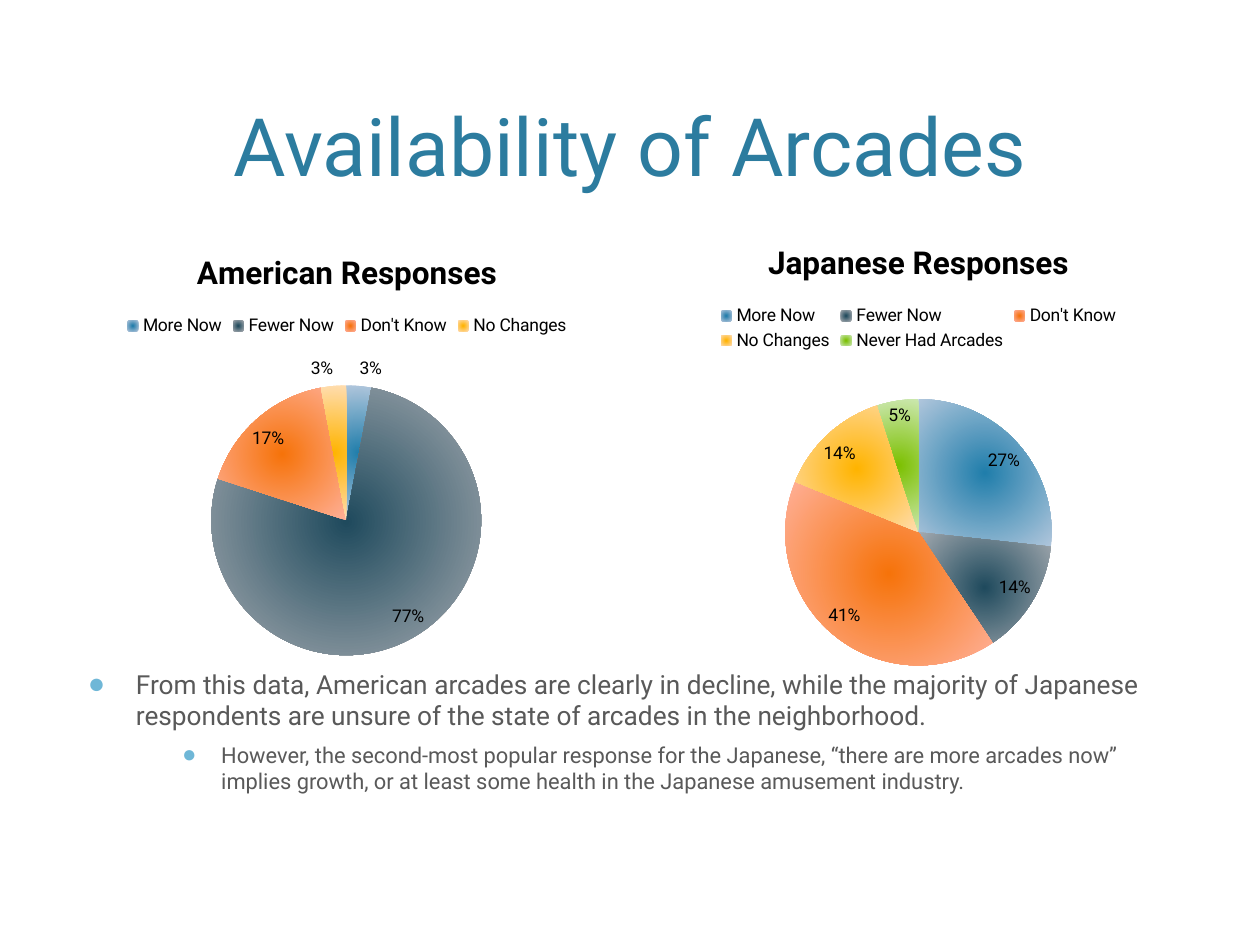
from lxml.etree import SubElement
from pptx import Presentation
from pptx.chart.data import CategoryChartData
from pptx.dml.color import RGBColor
from pptx.enum.chart import XL_CHART_TYPE as ChartType, XL_LABEL_POSITION as LabelPos, XL_LEGEND_POSITION as LegendPos
from pptx.enum.text import MSO_ANCHOR as Anchor, PP_ALIGN as Align
from pptx.oxml import parse_xml
from pptx.oxml.ns import nsdecls, qn
from pptx.util import Cm, Pt

FONT = "Roboto"
BULLET_FONT = "Arial"
BLACK = RGBColor(0x00, 0x00, 0x00)
TITLE_BLUE = RGBColor(0x2C, 0x7C, 0x9F)
BODY_GREY = RGBColor(0x59, 0x59, 0x59)
BULLET_BLUE = RGBColor(0x6F, 0xB7, 0xD7)

ANSWERS = {
    "More Now": (RGBColor(0x20, 0x7E, 0xAB), RGBColor(0xB0, 0xC6, 0xDC)),
    "Fewer Now": (RGBColor(0x1F, 0x4A, 0x5D), RGBColor(0xA4, 0xAA, 0xB0)),
    "Don't Know": (RGBColor(0xF6, 0x73, 0x0A), RGBColor(0xFF, 0xB0, 0x98)),
    "No Changes": (RGBColor(0xFF, 0xB4, 0x00), RGBColor(0xFF, 0xDD, 0xB0)),
    "Never Had Arcades": (RGBColor(0x7C, 0xC0, 0x00), RGBColor(0xCC, 0xE8, 0xB0)),
}

CENTRE_PATH = (
    '<a:path %s path="circle"><a:fillToRect l="50000" t="50000" r="50000" b="50000"/></a:path>'
    % nsdecls("a")
)


def apply(target, formats):
    for name, value in formats.items():
        setattr(target, name, value)


def style_font(font, size, color, bold=False):
    apply(font, {"name": FONT, "size": Pt(size), "bold": bold})
    font.color.rgb = color


def add_text_frame(slide, place, anchor):
    frame = slide.shapes.add_textbox(*map(Cm, place)).text_frame
    apply(frame, {"word_wrap": True, "vertical_anchor": anchor})
    return frame


def add_title(slide, words):
    title = add_text_frame(slide, (1.52, 0.3, 22.35, 3.71), Anchor.BOTTOM).paragraphs[0]
    title.alignment = Align.CENTER
    run = title.add_run()
    run.text = words
    style_font(run.font, 46, TITLE_BLUE)


def write_point(paragraph, words, size, before, indent, hanging):
    paragraph.space_before = Pt(before)
    run = paragraph.add_run()
    run.text = words
    style_font(run.font, size, BODY_GREY)
    props = paragraph._p.get_or_add_pPr()
    props.set("marL", str(Cm(indent)))
    props.set("indent", str(-Cm(hanging)))
    bullet_color = SubElement(props, qn("a:buClr"))
    SubElement(bullet_color, qn("a:srgbClr"), val=str(BULLET_BLUE))
    SubElement(props, qn("a:buSzPct"), val="110000")
    SubElement(props, qn("a:buFont"), typeface=BULLET_FONT)
    SubElement(props, qn("a:buChar"), char="●")


def color_slices(chart, answers):
    series = chart.plots[0].series[0]
    for index, answer in enumerate(answers):
        fill = series.points[index].format.fill
        fill.gradient()
        for stop, shade in zip(fill.gradient_stops, ANSWERS[answer]):
            stop.color.rgb = shade
    for linear in list(chart._chartSpace.iter(qn("a:lin"))):
        linear.getparent().replace(linear, parse_xml(CENTRE_PATH))


def place_pie(chart, area_percent):
    plot_area = chart._chartSpace.chart.plotArea
    for old in plot_area.findall(qn("c:layout")):
        plot_area.remove(old)
    layout = parse_xml("<c:layout %s/>" % nsdecls("c"))
    plot_area.insert(0, layout)
    manual = SubElement(layout, qn("c:manualLayout"))
    settings = {"layoutTarget": "inner", "xMode": "edge", "yMode": "edge"}
    settings.update(zip("xywh", (percent / 100 for percent in area_percent)))
    for name, value in settings.items():
        SubElement(manual, qn("c:" + name), val=str(value))


def add_responses(slide, heading, shares, place, pie_area):
    answers = list(ANSWERS)[:len(shares)]
    data = CategoryChartData()
    data.categories = answers
    data.add_series("Series 1", shares)
    chart = slide.shapes.add_chart(ChartType.PIE, *map(Cm, place), data).chart
    style_font(chart.font, 10, BLACK)

    apply(chart, {"has_title": True, "has_legend": True})
    title = chart.chart_title.text_frame
    title.text = heading
    style_font(title.paragraphs[0].runs[0].font, 18, BLACK, bold=True)
    apply(chart.legend, {"position": LegendPos.TOP, "include_in_layout": False})
    style_font(chart.legend.font, 10, BLACK)

    plot = chart.plots[0]
    apply(plot, {"vary_by_categories": True, "has_data_labels": True})
    apply(plot.data_labels, {
        "show_percentage": True,
        "show_value": False,
        "number_format": "0%",
        "number_format_is_linked": False,
        "position": LabelPos.BEST_FIT,
    })
    style_font(plot.data_labels.font, 10, BLACK)
    color_slices(chart, answers)
    place_pie(chart, pie_area)


def main():
    deck = Presentation()
    apply(deck, {"slide_width": Cm(25.4), "slide_height": Cm(19.05)})
    slide = deck.slides.add_slide(deck.slide_layouts[6])

    add_title(slide, "Availability of Arcades")
    findings = add_text_frame(slide, (1.52, 13.34, 22.35, 3.18), Anchor.TOP)
    write_point(
        findings.paragraphs[0],
        "From this data, American arcades are clearly in decline, while the majority of "
        "Japanese respondents are unsure of the state of arcades in the neighborhood.",
        15, 20, 0.97, 0.97)
    detail = findings.add_paragraph()
    detail.level = 1
    write_point(
        detail,
        "However, the second-most popular response for the Japanese, “there are more arcades "
        "now” implies growth, or at least some health in the Japanese amusement industry.",
        12.5, 6, 2.69, 0.79)

    add_responses(slide, "American Responses", (3, 77, 17, 3),
                  (0.43, 4.65, 13.13, 8.89), (29, 35.1, 41.8, 61.2))
    add_responses(slide, "Japanese Responses", (27, 14, 41, 14, 5),
                  (11.63, 4.44, 13.77, 9.32), (30.5, 38.6, 39, 57.8))
    deck.save("out.pptx")


if __name__ == "__main__":
    main()
